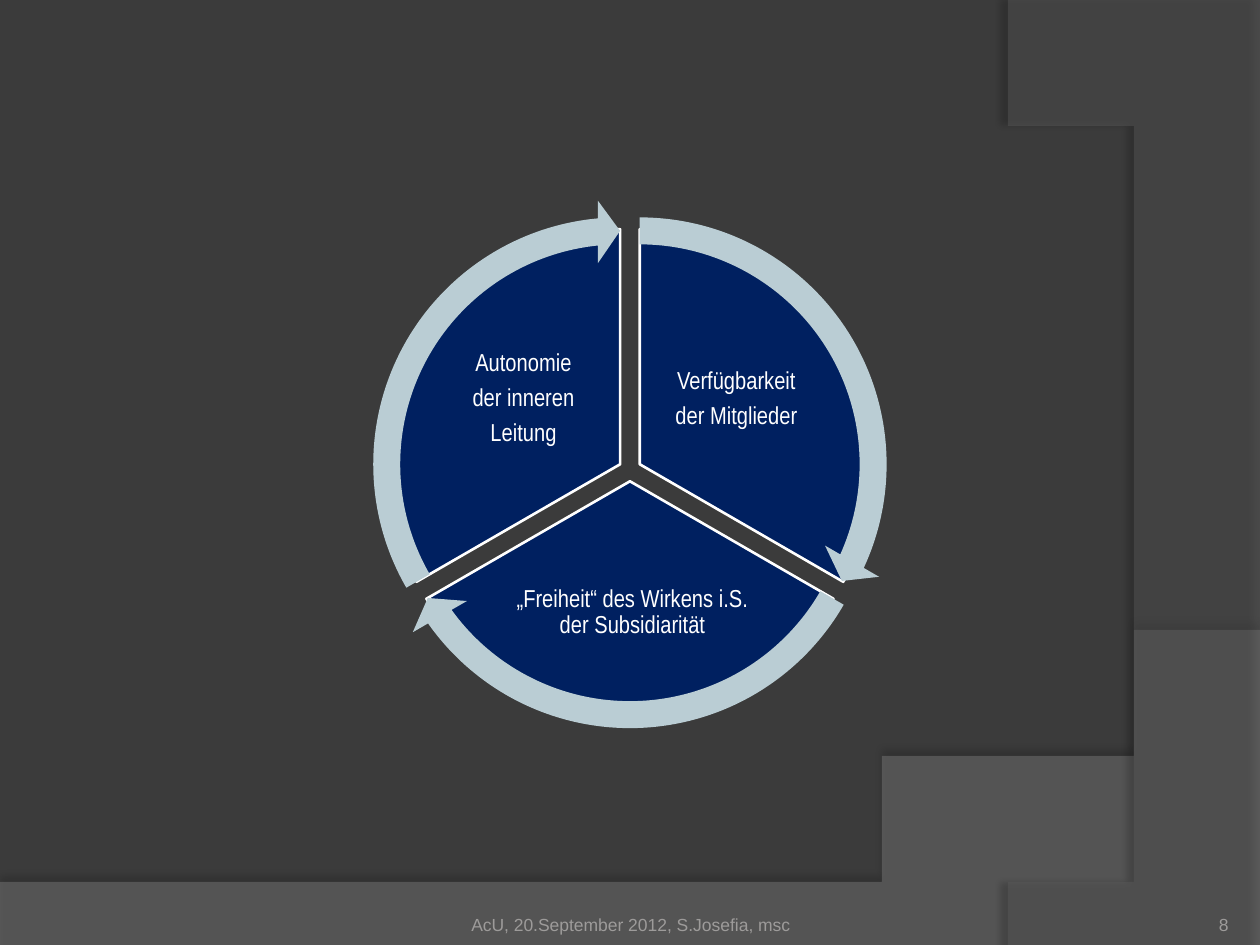
from math import cos, radians, sin

from lxml import etree
from pptx import Presentation
from pptx.dml.color import RGBColor
from pptx.enum.shapes import MSO_SHAPE
from pptx.enum.text import MSO_ANCHOR, PP_ALIGN
from pptx.oxml.ns import qn
from pptx.util import Inches, Pt

PIE, ARROW = MSO_SHAPE.PIE, MSO_SHAPE.CIRCULAR_ARROW
MIDDLE, BOTTOM = MSO_ANCHOR.MIDDLE, MSO_ANCHOR.BOTTOM
CENTER, RIGHT = PP_ALIGN.CENTER, PP_ALIGN.RIGHT

CHARCOAL = RGBColor(0x3B, 0x3B, 0x3B)
MID_GREY = RGBColor(0x7F, 0x7F, 0x7F)
DARK_GREY = RGBColor(0x5E, 0x5E, 0x5E)
FOOTER_GREY = RGBColor(0x9D, 0x9B, 0x9A)
NAVY = RGBColor(0x00, 0x20, 0x60)
PALE_BLUE = RGBColor(0xBA, 0xCD, 0xD4)
WHITE = RGBColor(0xFF, 0xFF, 0xFF)

presentation = Presentation()
presentation.slide_width = Inches(10)
presentation.slide_height = Inches(7.5)
UNIT = presentation.slide_width // 10  # square grid of 10 columns by 7.5 rows
slide = presentation.slides.add_slide(presentation.slide_layouts[6])
slide.background.fill.solid()
slide.background.fill.fore_color.rgb = CHARCOAL


def bezier(start, control_1, control_2, end, steps=48):
    """Return the points along a cubic curve, both ends included."""
    points = []
    for step in range(steps + 1):
        t = step / steps
        weights = ((1 - t) ** 3, 3 * t * (1 - t) ** 2, 3 * t * t * (1 - t), t ** 3)
        points.append(tuple(
            sum(weight * value for weight, value in zip(weights, values))
            for values in zip(start, control_1, control_2, end)))
    return points


def add_text(lines, left, top, width, height, font_name, size, color,
             alignment=CENTER, anchor=MIDDLE, inset=0):
    box = slide.shapes.add_textbox(*(round(n * UNIT) for n in (left, top, width, height)))
    frame = box.text_frame
    frame.word_wrap = True
    frame.vertical_anchor = anchor
    frame.margin_left = frame.margin_right = Inches(inset)
    frame.margin_top = frame.margin_bottom = Inches(inset)
    frame.text = "\n".join(lines)
    for paragraph in frame.paragraphs:
        paragraph.alignment = alignment
        paragraph.font.name = font_name
        paragraph.font.size = Pt(size)
        paragraph.font.color.rgb = color
    return frame


# Translucent background waves: outline, colour, opacity, shadow opacity, distance, angle
lower_wave = [(0, 7.5), (10, 7.5)] + bezier((10, 5.2), (5.59, 7.29), (3.91, 7.19), (0, 7.05))
right_wave = [(10, 0.02), (10, 7.5)] + bezier((8.21, 7.5), (9.35, 6.19), (10.18, 3), (8, 0))
waves = [
    (lower_wave, MID_GREY, 45, 35, 3.5, 270),
    (right_wave, DARK_GREY, 40, 45, 4, 180),
]
for points, color, opacity, shadow_opacity, distance, angle in waves:
    builder = slide.shapes.build_freeform(*points[0], scale=UNIT)
    builder.add_line_segments(points[1:], close=True)
    wave = builder.convert_to_shape()
    wave.fill.solid()
    wave.fill.fore_color.rgb = color
    wave.line.fill.background()
    wave.shadow.inherit = False
    properties = wave._element.spPr
    fill_color = properties.find(qn("a:solidFill"))[0]
    etree.SubElement(fill_color, qn("a:alpha"), val=str(opacity * 1000))
    shadow = etree.SubElement(
        properties.find(qn("a:effectLst")), qn("a:outerShdw"),
        blurRad=str(Pt(4)), dist=str(Pt(distance)), dir=str(angle * 60000),
        algn="ctr", rotWithShape="0")
    shadow_color = etree.SubElement(shadow, qn("a:srgbClr"), val="000000")
    etree.SubElement(shadow_color, qn("a:alpha"), val=str(shadow_opacity * 1000))

# Cycle: each third moves outward from the common centre along its middle angle
CENTER_X, CENTER_Y, GAP = 5, 3.73, 0.09
PIE_SIZE, ARROW_SIZE = 3.73, 4.2
DEGREE = 0.6  # one degree in adjustment units
HEAD_ANGLE = 3.275  # angle taken by the arrowhead, in adjustment units
sectors = [
    (270, 30, ["Verfügbarkeit", "der Mitglieder"], (5.18, 2.61, 1.33, 1.11)),
    (30, 150, ["„Freiheit“ des Wirkens i.S. der Subsidiarität"], (4.02, 4.37, 2, 0.98)),
    (150, 270, ["Autonomie", "der inneren", "Leitung"], (3.49, 2.61, 1.33, 1.11)),
]
for kind, size, color in ((PIE, PIE_SIZE, NAVY), (ARROW, ARROW_SIZE, PALE_BLUE)):
    for start, end, lines, label_area in sectors:
        middle = radians(start + 60)
        left = CENTER_X + GAP * cos(middle) - size / 2
        top = CENTER_Y + GAP * sin(middle) - size / 2
        shape = slide.shapes.add_shape(
            kind, *(round(n * UNIT) for n in (left, top, size, size)))
        shape.shadow.inherit = False
        shape.fill.solid()
        shape.fill.fore_color.rgb = color
        if kind == PIE:
            adjustments = (start * DEGREE, end * DEGREE)
            shape.line.color.rgb = WHITE
            shape.line.width = Pt(1.5)
            label = add_text(lines, *label_area, "Arial Narrow", 14, WHITE, inset=0.02)
            for paragraph in label.paragraphs:
                paragraph.line_spacing = 0.9
                paragraph.space_after = Pt(5)
        else:
            adjustments = (0.051, HEAD_ANGLE, end * DEGREE - HEAD_ANGLE,
                           start * DEGREE, 0.059)
            shape.line.fill.background()
        for index, value in enumerate(adjustments):
            shape.adjustments[index] = value

# Footer and slide number
add_text(["AcU, 20.September 2012, S.Josefia, msc"], 3.42, 7.02, 3.17, 0.4,
         "Arial", 10, FOOTER_GREY, anchor=BOTTOM)
add_text(["8"], 8.92, 7.02, 0.83, 0.4, "Arial", 10, FOOTER_GREY, RIGHT, BOTTOM)

presentation.save("out.pptx")
